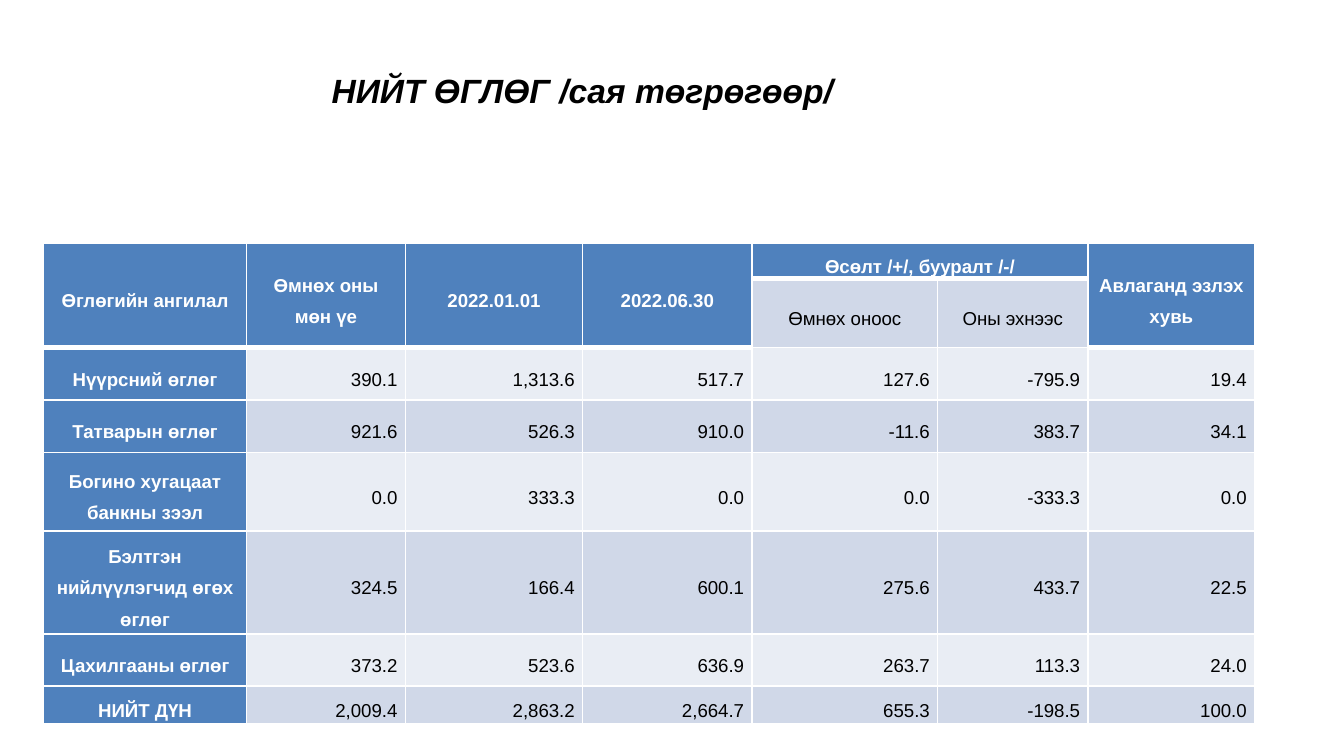
from lxml import etree
from pptx import Presentation
from pptx.dml.color import RGBColor
from pptx.enum.text import MSO_ANCHOR, PP_ALIGN
from pptx.oxml.ns import qn
from pptx.util import Cm, Pt

CENTER, RIGHT, MIDDLE = PP_ALIGN.CENTER, PP_ALIGN.RIGHT, MSO_ANCHOR.MIDDLE

TITLE = "НИЙТ ӨГЛӨГ /сая төгрөгөөр/"
HEADERS = [
    ["Өглөгийн ангилал", "Өмнөх оны мөн үе", "2022.01.01", "2022.06.30",
     "Өсөлт /+/, бууралт /-/", "", "Авлаганд эзлэх хувь"],
    ["", "", "", "", "Өмнөх оноос", "Оны эхнээс", ""],
]
DATA = [
    ["Нүүрсний өглөг", "390.1", "1,313.6", "517.7", "127.6", "-795.9", "19.4"],
    ["Татварын өглөг", "921.6", "526.3", "910.0", "-11.6", "383.7", "34.1"],
    ["Богино хугацаат банкны зээл", "0.0", "333.3", "0.0", "0.0", "-333.3", "0.0"],
    ["Бэлтгэн нийлүүлэгчид өгөх өглөг", "324.5", "166.4", "600.1", "275.6", "433.7", "22.5"],
    ["Цахилгааны өглөг", "373.2", "523.6", "636.9", "263.7", "113.3", "24.0"],
    ["НИЙТ ДҮН", "2,009.4", "2,863.2", "2,664.7", "655.3", "-198.5", "100.0"],
]
ROWS = HEADERS + DATA
COL_WIDTHS = [3.84, 3.0, 3.35, 3.2, 3.51, 2.84, 3.15]
ROW_HEIGHTS = [0.66, 1.29, 0.99, 0.99, 1.49, 1.93, 0.99, 0.72]
MERGES = [((0, c), (1, c)) for c in (0, 1, 2, 3, 6)] + [((0, 4), (0, 5))]
SUBHEADS = {(1, 4), (1, 5)}

THEME = {
    "header": "4F81BD", "bands": ("D0D8E8", "E9EDF4"),
    "light": "FFFFFF", "dark": "000000",
    "font": "Arial", "title": 18, "cell": 10, "line": 1, "rule": 3,
}
MARGINS = {"margin_left": Cm(0.15), "margin_right": Cm(0.15),
           "margin_top": Cm(0.03), "margin_bottom": 0}


def apply(obj, values):
    """Set attributes of an object from a dict."""
    for name, value in values.items():
        setattr(obj, name, value)


def write(p, text, align, color, **font):
    """Write one formatted run into a paragraph."""
    p.alignment = align
    r = p.add_run()
    r.text = text
    apply(r.font, {"name": THEME["font"], **font})
    r.font.color.rgb = RGBColor.from_string(color)


def add_borders(cell, bottom, top):
    """Draw the cell's borders, with a given bottom width."""
    widths = {"L": THEME["line"], "R": THEME["line"]}
    if top:
        widths["T"] = THEME["line"]
    widths["B"] = bottom
    tcPr = cell._tc.get_or_add_tcPr()
    for side, width in widths.items():
        ln = etree.SubElement(tcPr, qn(f"a:ln{side}"), w=str(Pt(width)))
        fill = etree.SubElement(ln, qn("a:solidFill"))
        etree.SubElement(fill, qn("a:srgbClr"), val=THEME["light"])


def add_title(s):
    """Add the slide title."""
    sp = s.shapes.add_textbox(Cm(5.08), Cm(1.19), Cm(11.86), Cm(1.02))
    tf = sp.text_frame
    tf.word_wrap = True
    write(tf.paragraphs[0], TITLE, CENTER, THEME["dark"],
          size=Pt(THEME["title"]), bold=True, italic=True)


def add_payables(s):
    """Add the table of payables."""
    frame = s.shapes.add_table(len(ROWS), len(COL_WIDTHS), Cm(0.82), Cm(4.6),
                               Cm(sum(COL_WIDTHS)), Cm(sum(ROW_HEIGHTS)))
    table = frame.table
    for column, width in zip(table.columns, COL_WIDTHS):
        column.width = Cm(width)
    for row, height in zip(table.rows, ROW_HEIGHTS):
        row.height = Cm(height)
    for first, last in MERGES:
        table.cell(*first).merge(table.cell(*last))

    for i, values in enumerate(ROWS):
        for j, text in enumerate(values):
            cell = table.cell(i, j)
            in_head = i < len(HEADERS) and (i, j) not in SUBHEADS
            strong = in_head or j == 0
            apply(cell, {**MARGINS, "vertical_anchor": MIDDLE})
            add_borders(cell, THEME["rule" if in_head else "line"], i == 0)
            cell.fill.solid()
            cell.fill.fore_color.rgb = RGBColor.from_string(
                THEME["header"] if strong else THEME["bands"][(i + 1) % 2])
            p = cell.text_frame.paragraphs[0]
            p.line_spacing = 1.5
            if text:
                write(p, text, CENTER if strong or (i, j) in SUBHEADS else RIGHT,
                      THEME["light" if strong else "dark"],
                      size=Pt(THEME["cell"]), bold=strong)
            else:
                p.font.size = Pt(THEME["cell"])


def main():
    """Build the slide and save it."""
    prs = Presentation()
    apply(prs, {"slide_width": Cm(25.4), "slide_height": Cm(14.29)})
    s = prs.slides.add_slide(prs.slide_layouts[6])
    add_title(s)
    add_payables(s)
    prs.save("out.pptx")


if __name__ == "__main__":
    main()
